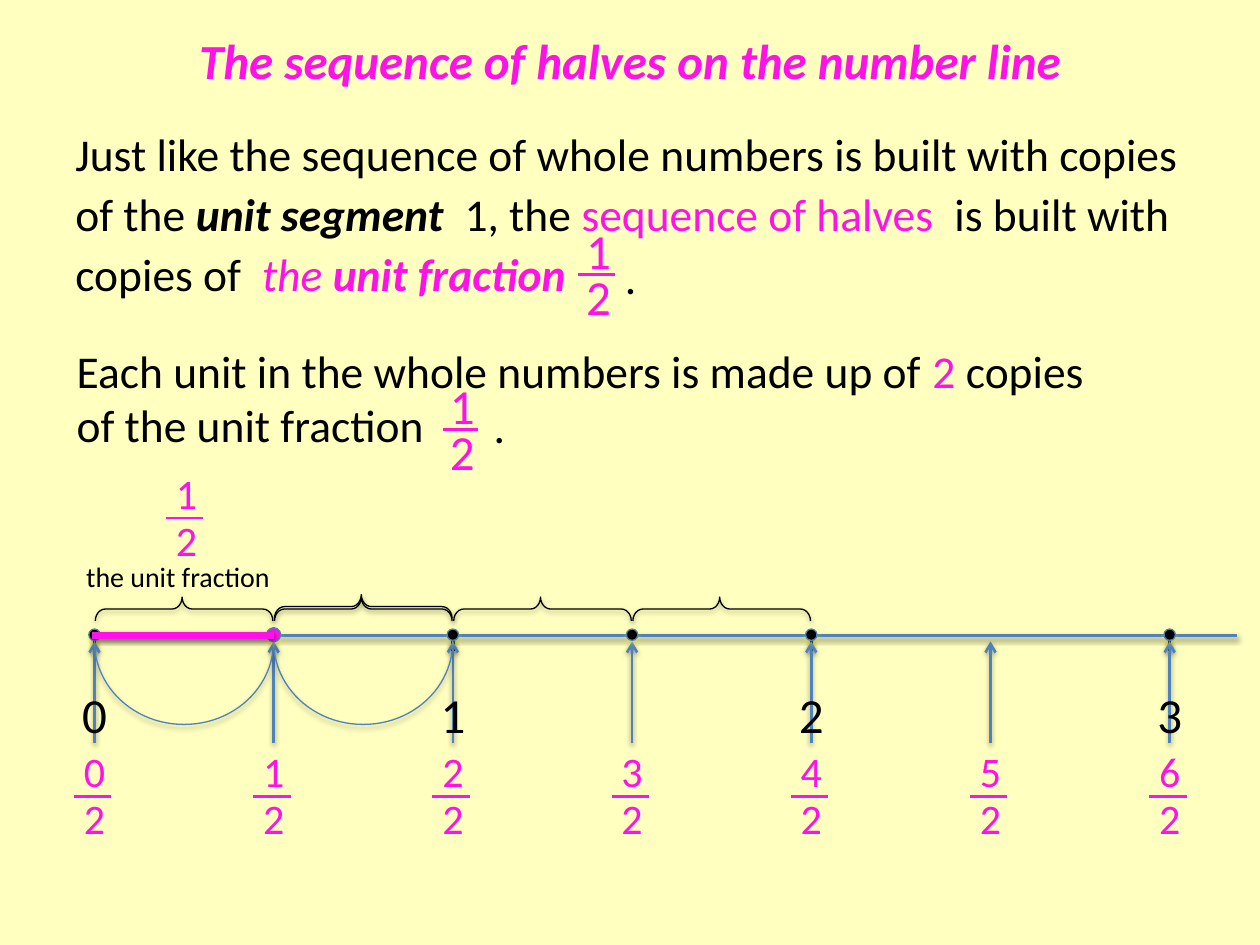
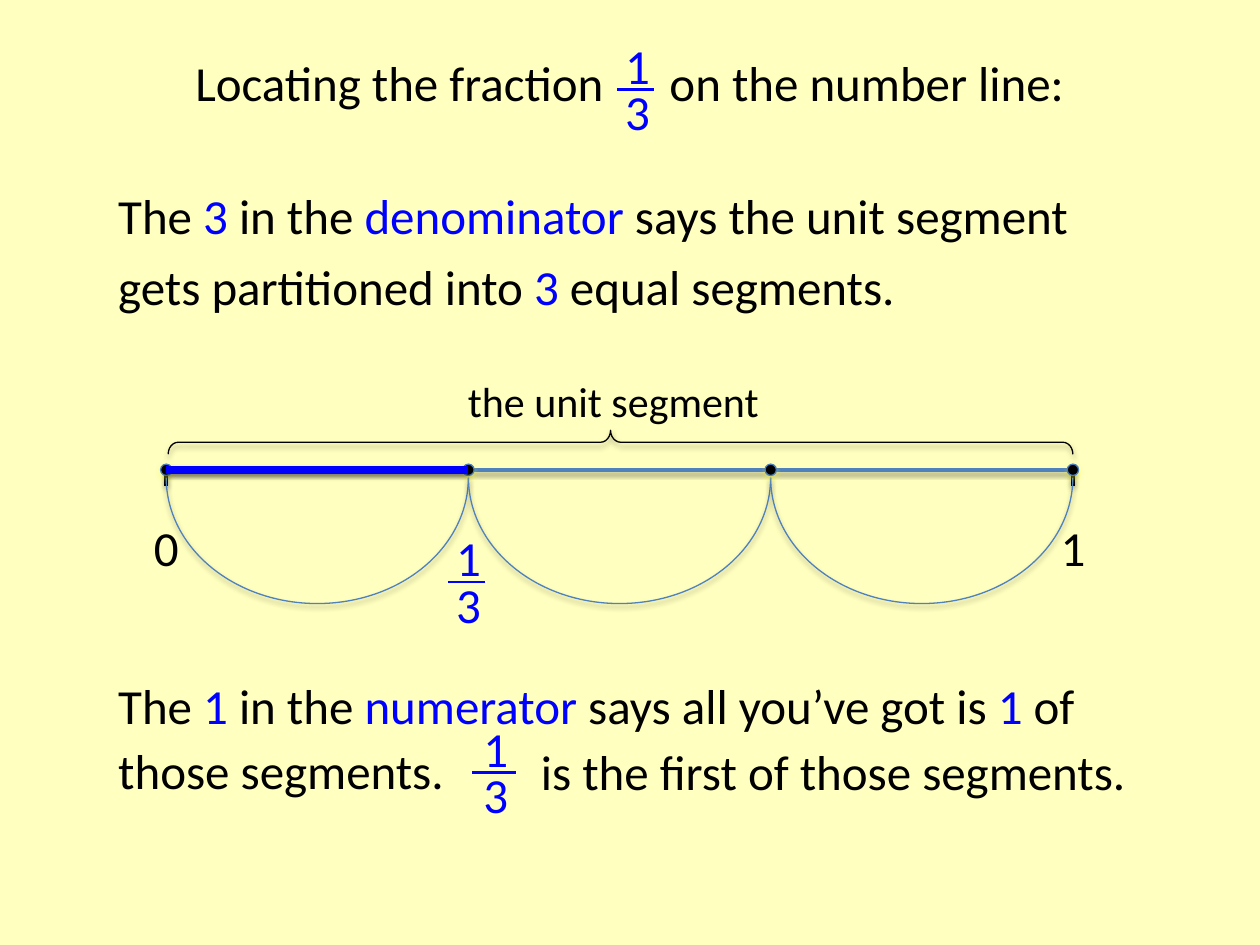
from lxml import etree
from pptx import Presentation
from pptx import util as u
from pptx.dml import color
from pptx.enum import shapes, text
from pptx.oxml import ns

FONT = "Calibri"
PAPER, BLACK, BLUE, DOT_EDGE = "FFFFBF", "000000", "4F81BD", "4B7EBC"
PINK, ROYAL = "FF11EA", "0000FF"
CENTER, LEFT = text.PP_ALIGN.CENTER, text.PP_ALIGN.LEFT
BRACE, BRACKET, OVAL = (shapes.MSO_SHAPE.RIGHT_BRACE, shapes.MSO_SHAPE.LEFT_BRACKET,
                        shapes.MSO_SHAPE.OVAL)
rgb = color.RGBColor.from_string
shadows = []


def add_text(slide, box, runs, size, align=LEFT, spacing=1.0, middle=False):
    """Add one paragraph; each run is (wording, colour) or (wording, colour, "b"/"i"/"bi")."""
    frame = slide.shapes.add_textbox(*map(u.Pt, box)).text_frame
    frame.word_wrap = True
    if middle:
        frame.vertical_anchor = text.MSO_ANCHOR.MIDDLE
    paragraph = frame.paragraphs[0]
    paragraph.alignment = align
    paragraph.line_spacing = spacing
    for wording, colour, *style in runs:
        run = paragraph.add_run()
        run.text = wording
        run.font.name = FONT
        run.font.size = u.Pt(size)
        run.font.color.rgb = rgb(colour)
        run.font.bold = "b" in "".join(style)
        run.font.italic = "i" in "".join(style)


def add_line(slide, start, end, colour, width, arrow=False, shadow=True):
    line = slide.shapes.add_connector(shapes.MSO_CONNECTOR.STRAIGHT, *map(u.Pt, start + end))
    line.line.color.rgb = rgb(colour)
    line.line.width = u.Pt(width)
    if arrow:
        etree.SubElement(line.line._get_or_add_ln(), ns.qn("a:tailEnd"), type="arrow")
    etree.SubElement(line._element.spPr, ns.qn("a:effectLst"))
    if shadow:
        shadows.append((line, BLACK, 38))


presentation = Presentation()
presentation.slide_width, presentation.slide_height = u.Pt(720), u.Pt(540)
halves, thirds = [presentation.slides.add_slide(presentation.slide_layouts[6]) for _ in range(2)]
for slide in (halves, thirds):
    slide.background.fill.solid()
    slide.background.fill.fore_color.rgb = rgb(PAPER)

# Number lines: origin and step of the marks, height of the axis
HALF_X, HALF_STEP, HALF_Y = 54, 102.4, 363.2
THIRD_X, THIRD_STEP, THIRD_Y = 95, 172.7, 268.5
half_marks = [HALF_X + HALF_STEP * i for i in range(7)]
third_marks = [THIRD_X + THIRD_STEP * i for i in range(4)]

add_line(halves, (HALF_X, HALF_Y), (707, HALF_Y), BLUE, 2)
add_line(thirds, (THIRD_X, THIRD_Y), (third_marks[-1], THIRD_Y), BLUE, 2)
ticks = [(halves, x, HALF_Y) for x in half_marks[::2]]
ticks += [(thirds, x, THIRD_Y) for x in third_marks[::3]]
for slide, x, y in ticks:
    add_line(slide, (x, y), (x, y + 9), BLACK, 2)
for x in half_marks:
    add_line(halves, (x, 424.8), (x, 366.5), BLUE, 1.5, arrow=True)

# Outlines: slide, kind, centre x, centre y, width and height before turning, colour
outlines = []
for i in range(4):
    middle_x = HALF_X + HALF_STEP * (i + 0.5)
    outlines.append((halves, BRACE, middle_x, 348, 13.7, 101.5, BLACK))
    if i < 2:
        outlines.append((halves, BRACKET, middle_x, 390.2, 47.5, HALF_STEP, BLUE))
outlines.append((halves, BRACE, HALF_X + HALF_STEP * 1.5, 346.6, 13.7, 101.5, BLACK))
outlines.append((thirds, BRACE, 354.6, 252.7, 13.7, 517, BLACK))
for x in third_marks[:3]:
    outlines.append((thirds, BRACKET, x + THIRD_STEP / 2, 308.9, 72, THIRD_STEP, BLUE))
for i, x in enumerate(half_marks):
    if i != 5:
        size = 8 if i == 1 else 6.5
        outlines.append((halves, OVAL, x, HALF_Y - 0.5, size, size, PINK if i == 1 else BLACK))
for x in third_marks:
    outlines.append((thirds, OVAL, x, THIRD_Y, 6.5, 6.5, BLACK))

for slide, kind, x, y, width, height, colour in outlines:
    shape = slide.shapes.add_shape(kind, u.Pt(x - width / 2), u.Pt(y - height / 2),
                                   u.Pt(width), u.Pt(height))
    shape.shadow.inherit = False
    shape.line.width = u.Pt(0.75)
    if kind == OVAL:
        shape.fill.solid()
        shape.fill.fore_color.rgb = rgb(colour)
        shape.line.color.rgb = rgb(DOT_EDGE)
        shadows.append((shape, "FFFF00", 35))
        continue
    shape.fill.background()
    shape.line.color.rgb = rgb(colour)
    shape.rotation = 270
    if kind == BRACE:
        shape.adjustments[0], shape.adjustments[1] = 0.419, 0.489
    else:
        shape.adjustments[0] = 1.072 if slide == halves else 1.567
    shadows.append((shape, BLACK, 38))

add_line(halves, (52.6, HALF_Y), (half_marks[1], HALF_Y), PINK, 4.5)
add_line(thirds, (THIRD_X, THIRD_Y), (third_marks[1], THIRD_Y), ROYAL, 4.5)

# Wording about halves
add_text(halves, (36, 3, 648, 62), [("The sequence of halves on the number line", PINK, "bi")],
         28, CENTER, middle=True)
add_text(halves, (36, 65.5, 648, 130), [
    ("Just like the sequence of whole numbers is built with copies of the ", BLACK),
    ("unit segment ", BLACK, "bi"), (" 1, the ", BLACK), ("sequence of halves", PINK),
    ("  is built with copies of  ", BLACK), ("the ", PINK, "i"),
    ("unit fraction", PINK, "bi")], 26, spacing=1.1)
add_text(halves, (36.7, 192.2, 598, 70), [
    ("Each unit in the whole numbers is made up of ", BLACK), ("2", PINK),
    (" copies of the unit fraction", BLACK)], 26)
for x, y in ((350, 138.5), (275, 224)):
    add_text(halves, (x, y, 30, 39), [(".", BLACK)], 26)
add_text(halves, (38, 316, 127.4, 26.6), [("the unit fraction", BLACK)], 16, CENTER)

# Wording about thirds
for x, width, wording in ((104.5, 260, "Locating the fraction"),
                          (375.5, 260, "on the number line:")):
    add_text(thirds, (x, 2, width, 90), [(wording, BLACK)], 28, middle=True)
add_text(thirds, (60.5, 95.8, 587, 88), [
    ("The ", BLACK), ("3", ROYAL), (" in the ", BLACK), ("denominator ", ROYAL),
    ("says the unit segment gets partitioned into ", BLACK), ("3 ", ROYAL),
    ("equal segments.", BLACK)], 28, spacing=1.2)
add_text(thirds, (136, 211, 429, 36), [("the unit segment", BLACK)], 24, CENTER)
add_text(thirds, (60.5, 379.4, 587, 80), [
    ("The ", BLACK), ("1", ROYAL), (" in the ", BLACK), ("numerator", ROYAL),
    (" says all you’ve got is ", BLACK), ("1", ROYAL), (" of those segments.", BLACK)],
    28, spacing=1.1)
add_text(thirds, (302, 416.9, 364, 42.5), [("is the first of those segments.", BLACK)],
         28, spacing=1.1)

# Whole numbers under the marks
whole_numbers = [(halves, x, 387.4, i) for i, x in enumerate(half_marks[::2])]
whole_numbers += [(thirds, x, 292.3, i) for i, x in enumerate(third_marks[::3])]
for slide, x, y, number in whole_numbers:
    add_text(slide, (x - 30, y, 60, 41), [(str(number), BLACK)], 28, CENTER)

# Fractions: slide, numerator, denominator, centre x, bar y, size, bar width, colour
fractions = [(halves, i, 2, x, 455, 24, 21.4, PINK) for i, x in enumerate(half_marks)]
fractions += [
    (halves, 1, 2, 106.6, 296, 24, 21.4, PINK),
    (halves, 1, 2, 342, 157, 28, 21.4, PINK),
    (halves, 1, 2, 264.2, 245.5, 28, 20, PINK),
    (thirds, 1, 3, 364.3, 51.1, 28, 21.4, ROYAL),
    (thirds, 1, 3, third_marks[1], 332.6, 28, 21.4, ROYAL),
    (thirds, 1, 3, 283.3, 441.4, 28, 25, ROYAL),
]
for slide, numerator, denominator, x, y, size, width, colour in fractions:
    rise, drop = (32.4, 5.8) if size == 24 else (34.6, 8)
    for number, top in ((numerator, y - rise), (denominator, y - drop)):
        add_text(slide, (x - 23, top, 46, size * 1.5), [(str(number), colour)], size, CENTER)
    bar_x = x - 1
    add_line(slide, (bar_x - width / 2, y), (bar_x + width / 2, y), colour, 1.5, shadow=False)

for shape, colour, opacity in shadows:
    effects = shape._element.spPr.find(ns.qn("a:effectLst"))
    shadow = etree.SubElement(effects, ns.qn("a:outerShdw"), blurRad=str(u.Pt(3.1)),
                              dist=str(u.Pt(1.6)), dir="5400000", rotWithShape="0")
    tint = etree.SubElement(shadow, ns.qn("a:srgbClr"), val=colour)
    etree.SubElement(tint, ns.qn("a:alpha"), val=str(opacity * 1000))

presentation.save("out.pptx")
